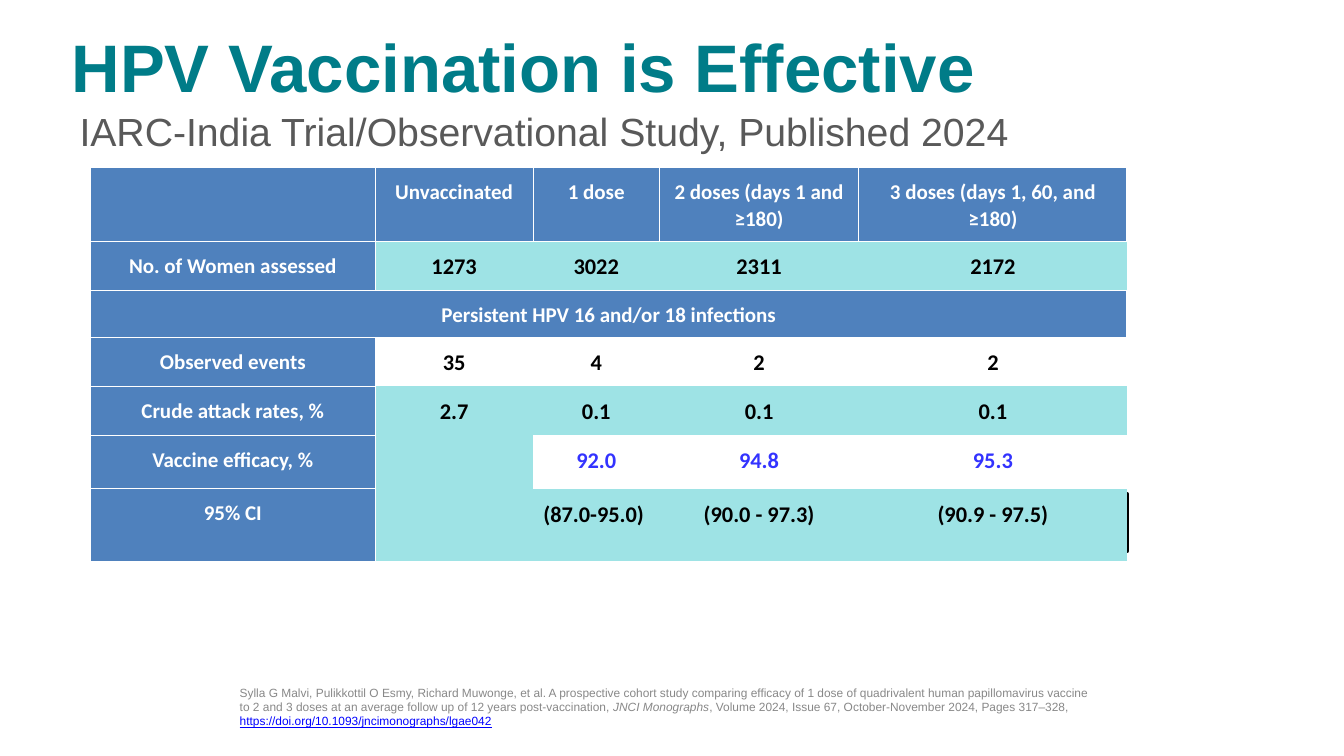
from lxml import etree
from pptx import Presentation
from pptx.dml.color import RGBColor
from pptx.enum.shapes import MSO_SHAPE
from pptx.enum.text import MSO_ANCHOR, PP_ALIGN
from pptx.oxml.ns import qn
from pptx.util import Inches, Pt

RECT = MSO_SHAPE.RECTANGLE
MIDDLE = MSO_ANCHOR.MIDDLE
LEFT, CENTER = PP_ALIGN.LEFT, PP_ALIGN.CENTER
PLAIN_TABLE = "{2D5ABB26-0587-4C30-8999-92F81FD0307C}"
TITLE_ONLY = 5

TEAL, GRAY, CITE_GRAY, LINK = "007C88", "595959", "888888", "0000FF"
BLUE, AQUA, WHITE, BLACK, VIOLET = "4F81BD", "9EE3E5", "FFFFFF", "000000", "3333FF"
BEIGE = "EEECE1"

BAND_ROW, EFFICACY_ROW, CI_ROW = 2, 5, 6
COLUMNS = [21.15, 11.78, 9.38, 14.85, 19.95]
ROWS = [8.8, 6.13, 6.13, 6.13, 6.13, 7.07, 9.6]
RESULTS = [
    ["", "Unvaccinated", "1 dose", "2 doses (days 1 and ≥180)",
     "3 doses (days 1, 60, and ≥180)"],
    ["No. of Women assessed", "1273", "3022", "2311", "2172"],
    ["Persistent HPV 16 and/or 18 infections", "", "", "", ""],
    ["Observed events", "35", "4", "2", "2"],
    ["Crude attack rates, %", "2.7", "0.1", "0.1", "0.1"],
    ["Vaccine efficacy, %", "", "92.0", "94.8", "95.3"],
    ["95% CI", "", "(87.0-95.0)", "(90.0 - 97.3)", "(90.9 - 97.5)"],
]
CITATION = [
    ("Sylla G Malvi, Pulikkottil O Esmy, Richard Muwonge, et al. A prospective cohort "
     "study comparing efficacy of 1 dose of quadrivalent human papillomavirus vaccine "
     "to 2 and 3 doses at an average follow up of 12 years post-vaccination, ", {}),
    ("JNCI Monographs", {"italic": True}),
    (", Volume 2024, Issue 67, October-November 2024, Pages 317–328, ", {}),
    ("https://doi.org/10.1093/jncimonographs/lgae042",
     {"color": LINK, "underline": True}),
]


def rgb(value):
    return RGBColor.from_string(value)


class SlideBuilder:
    heading_font = "Arial"
    table_font = "Calibri"
    inset = Inches(0.1)

    def __init__(self, prs):
        self.prs = prs
        self.s = prs.slides.add_slide(prs.slide_layouts[TITLE_ONLY])

    def x(self, percent):
        return round(self.prs.slide_width * percent / 100)

    def y(self, percent):
        return round(self.prs.slide_height * percent / 100)

    def box(self, left, top, width, height):
        return self.x(left), self.y(top), self.x(width), self.y(height)

    def style(self, font, name, size, color, bold=False, italic=False, underline=False):
        font.name, font.size, font.bold = name, Pt(size), bold
        font.italic, font.underline = italic, underline
        font.color.rgb = rgb(color)

    def title(self, text, box, size, color):
        sp = self.s.shapes.title
        sp.left, sp.top, sp.width, sp.height = self.box(*box)
        tf = sp.text_frame
        tf.text = text
        tf.vertical_anchor = MIDDLE
        p = tf.paragraphs[0]
        p.alignment, p.line_spacing = LEFT, 0.8
        self.style(p.runs[0].font, self.heading_font, size, color, bold=True)

    def text(self, parts, box, size, color, margin=0.05):
        tf = self.s.shapes.add_textbox(*self.box(*box)).text_frame
        tf.word_wrap = True
        tf.margin_top = tf.margin_bottom = Inches(margin)
        p = tf.paragraphs[0]
        for text, look in parts:
            r = p.add_run()
            r.text = text
            self.style(r.font, self.heading_font, size, **{"color": color, **look})

    def rect(self, box, fill, line, width):
        sp = self.s.shapes.add_shape(RECT, *self.box(*box))
        sp.shadow.inherit = False
        sp.fill.solid()
        sp.fill.fore_color.rgb = rgb(fill)
        sp.line.color.rgb = rgb(line)
        sp.line.width = Pt(width)

    def borders(self, cell, sides):
        tc_pr = cell._tc.get_or_add_tcPr()
        for side in "LRTB":
            ln = etree.SubElement(tc_pr, qn(f"a:ln{side}"), w=str(Pt(0.75)))
            if side in sides:
                solid = etree.SubElement(ln, qn("a:solidFill"))
                etree.SubElement(solid, qn("a:srgbClr"), val=WHITE)
            else:
                etree.SubElement(ln, qn("a:noFill"))

    def cell(self, cell, text, sides, fill, size, color, align=CENTER):
        cell.margin_left = cell.margin_right = self.inset
        cell.margin_top = cell.margin_bottom = self.inset
        self.borders(cell, sides)
        if fill:
            cell.fill.solid()
            cell.fill.fore_color.rgb = rgb(fill)
        else:
            cell.fill.background()
        p = cell.text_frame.paragraphs[0]
        p.text = text
        p.alignment, p.line_spacing = align, 1.07
        self.style(p.font, self.table_font, size, color, bold=True)
        for r in p.runs:
            self.style(r.font, self.table_font, size, color, bold=True)

    def table(self, left, top, columns, rows, values):
        box = self.box(left, top, sum(columns), sum(rows))
        table = self.s.shapes.add_table(len(rows), len(columns), *box).table
        table.first_row = table.horz_banding = False
        table._tbl.tblPr.find(qn("a:tableStyleId")).text = PLAIN_TABLE
        for column, width in zip(table.columns, columns):
            column.width = self.x(width)
        for row, height in zip(table.rows, rows):
            row.height = self.y(height)
        for i, row in enumerate(values):
            for j, text in enumerate(row):
                cell = table.cell(i, j)
                if j == 0 or i in (0, BAND_ROW):
                    self.cell(cell, text, "LRTB", BLUE, 15, WHITE)
                    continue
                sides = ("LR" if j == 1 else "") + {1: "TB", 3: "T"}.get(i, "")
                clear = i == 3 or (i == EFFICACY_ROW and j > 1)
                self.cell(cell, text, sides, None if clear else AQUA, 16,
                          VIOLET if i == EFFICACY_ROW else BLACK,
                          LEFT if (i, j) == (CI_ROW, 2) else CENTER)
        table.cell(BAND_ROW, 0).merge(table.cell(BAND_ROW, len(columns) - 1))
        table.cell(EFFICACY_ROW, 1).merge(table.cell(CI_ROW, 1))


def main():
    prs = Presentation()
    prs.slide_width, prs.slide_height = Inches(13.33), Inches(7.5)
    slide = SlideBuilder(prs)
    slide.title("HPV Vaccination is Effective", (4.58, 2.53, 90.9, 14.4), 48, TEAL)
    slide.text(CITATION, (17.1, 89.33, 65.25, 8.4), 8.5, CITE_GRAY, margin=0.1)
    slide.text([("IARC-India Trial/Observational Study, Published 2024", {})],
               (5.18, 13.6, 79.88, 8.53), 28, GRAY)
    slide.rect((39.9, 65.33, 43.95, 7.6), BEIGE, BLACK, 3)
    slide.table(6.75, 22.13, COLUMNS, ROWS, RESULTS)
    prs.save("out.pptx")


if __name__ == "__main__":
    main()
